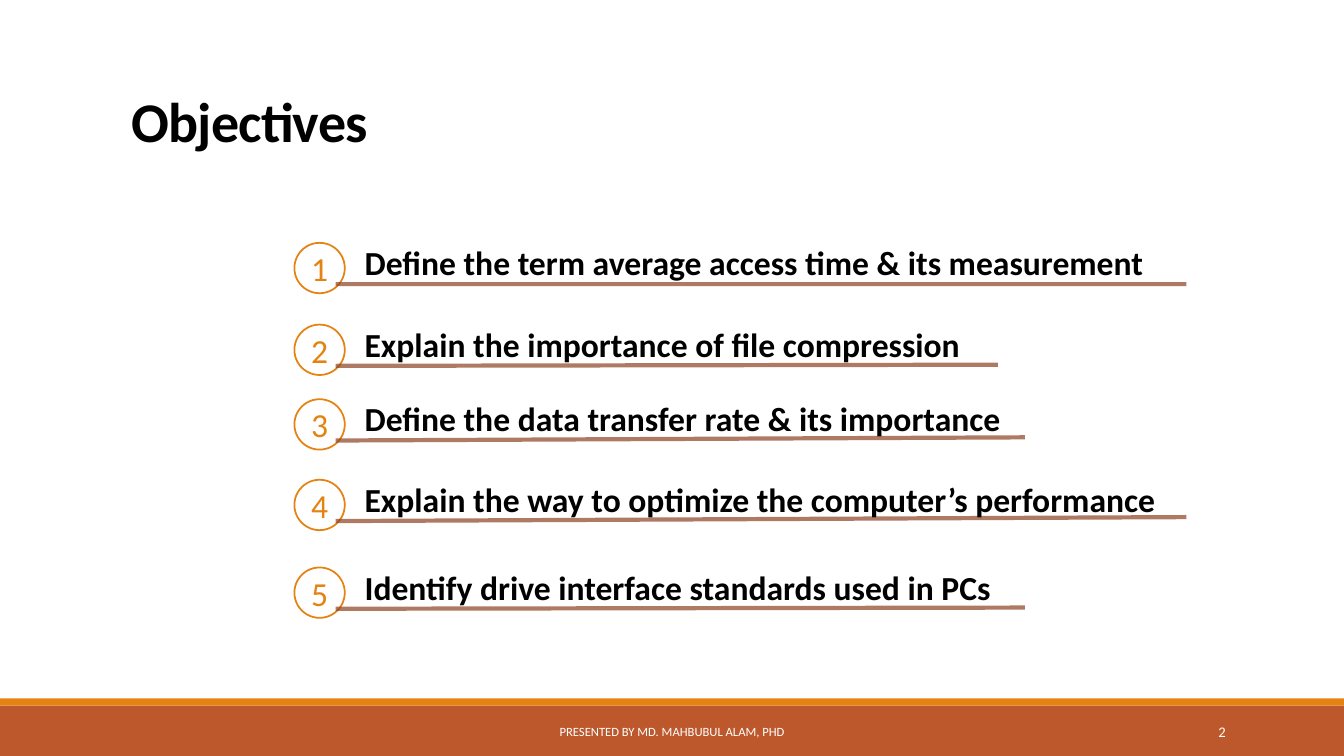
"""Build the Objectives slide: five numbered, underlined goals above a footer band."""
from lxml.etree import SubElement
from pptx import Presentation
from pptx.dml.color import RGBColor
from pptx.enum.shapes import MSO_CONNECTOR as CONN, MSO_SHAPE as SHAPE
from pptx.enum.text import MSO_ANCHOR as ANCHOR, MSO_AUTO_SIZE as FIT, PP_ALIGN as ALIGN
from pptx.oxml.ns import qn
from pptx.util import Cm, Pt

FONT = "Calibri"
BLACK = RGBColor(0x00, 0x00, 0x00)
WHITE = RGBColor(0xFF, 0xFF, 0xFF)
ORANGE = RGBColor(0xE4, 0x83, 0x12)
RUST = RGBColor(0xBD, 0x58, 0x2C)
BROWN = RGBColor(0x8E, 0x42, 0x21)

WIDTH, HEIGHT = 33.87, 19.05
CIRCLE_LEFT, CIRCLE_SIZE = 7.42, 1.27
RULE_LEFT, RULE_DROP = 8.46, 1.04
TEXT_LEFT, TEXT_RAISE = 8.94, 0.15

# top, text width, rule end, rule rise, wording
OBJECTIVES = [
    (6.12, 20.96, 29.9, 0, "Define the term average access time & its measurement"),
    (8.18, 16.43, 25.15, 0.03, "Explain the importance of file compression"),
    (10.06, 17.25, 25.83, 0.08, "Define the data transfer rate & its importance"),
    (12.09, 21.41, 29.9, 0.1, "Explain the way to optimize the computer’s performance"),
    (14.3, 17.02, 25.83, 0.03, "Identify drive interface standards used in PCs"),
]


def add_run(tf, text, size, color, bold=False, align=ALIGN.LEFT):
    p = tf.paragraphs[0]
    p.alignment = align
    r = p.add_run()
    r.text = text
    r.font.name = FONT
    r.font.size = Pt(size)
    r.font.bold = bold
    r.font.color.rgb = color
    return r


def add_shape(shapes, kind, left, top, width, height, fill, line=None):
    sp = shapes.add_shape(kind, Cm(left), Cm(top), Cm(width), Cm(height))
    sp.shadow.inherit = False
    sp.fill.solid()
    sp.fill.fore_color.rgb = fill
    if line is None:
        sp.line.fill.background()
    else:
        sp.line.color.rgb = line
        sp.line.width = Pt(1.25)
    return sp


def add_text(shapes, left, top, width, height, text, size, color,
             bold=False, align=ALIGN.LEFT, anchor=ANCHOR.TOP, wrap=True):
    tf = shapes.add_textbox(Cm(left), Cm(top), Cm(width), Cm(height)).text_frame
    tf.word_wrap = wrap
    tf.vertical_anchor = anchor
    add_run(tf, text, size, color, bold, align)


def add_rule(shapes, x1, y1, x2, y2):
    cxn = shapes.add_connector(CONN.STRAIGHT, Cm(x1), Cm(y1), Cm(x2), Cm(y2))
    cxn.line.color.rgb = BROWN
    cxn.line.width = Pt(3)
    sp_pr = cxn._element.spPr
    color = sp_pr.find(".//" + qn("a:srgbClr"))
    SubElement(color, qn("a:alpha")).set("val", "70000")
    SubElement(sp_pr, qn("a:effectLst"))


def add_objective(s, number, top, width, rule_end, rise, text):
    shapes = s.shapes.add_group_shape().shapes
    circle = add_shape(shapes, SHAPE.OVAL, CIRCLE_LEFT, top, CIRCLE_SIZE, CIRCLE_SIZE,
                       WHITE, ORANGE)
    tf = circle.text_frame
    tf.word_wrap = False
    tf.vertical_anchor = ANCHOR.MIDDLE
    add_run(tf, str(number), 24, ORANGE, align=ALIGN.CENTER)
    rule_top = top + RULE_DROP
    add_rule(shapes, RULE_LEFT, rule_top, rule_end, rule_top - rise)
    add_text(shapes, TEXT_LEFT, top - TEXT_RAISE, width, 1.27, text, 24, BLACK,
             bold=True, wrap=False)


def add_title(s, text):
    title = s.shapes.title
    title.left, title.top, title.width, title.height = Cm(3.05), Cm(1.9), Cm(27.94), Cm(2.11)
    tf = title.text_frame
    tf.auto_size = FIT.NONE
    tf.vertical_anchor = ANCHOR.BOTTOM
    r = add_run(tf, text, 40, BLACK, bold=True)
    r.font._element.set("spc", "-50")
    tf.paragraphs[0].line_spacing = 0.85


def add_footer(s):
    add_shape(s.shapes, SHAPE.RECTANGLE, 0, 17.78, WIDTH, 1.27, RUST)
    add_shape(s.shapes, SHAPE.RECTANGLE, 0, 17.6, WIDTH, 0.18, ORANGE)
    add_text(s.shapes, 10.24, 17.93, 13.39, 1.02, "PRESENTED BY MD. MAHBUBUL ALAM, PHD",
             9, WHITE, align=ALIGN.CENTER, anchor=ANCHOR.MIDDLE)
    add_text(s.shapes, 27.51, 17.93, 3.63, 1.02, "2", 10.5, WHITE,
             align=ALIGN.RIGHT, anchor=ANCHOR.MIDDLE)


def main():
    prs = Presentation()
    prs.slide_width, prs.slide_height = Cm(WIDTH), Cm(HEIGHT)
    s = prs.slides.add_slide(prs.slide_layouts[5])
    add_footer(s)
    add_title(s, "Objectives")
    for number, objective in enumerate(OBJECTIVES, 1):
        add_objective(s, number, *objective)
    prs.save("out.pptx")


if __name__ == "__main__":
    main()
